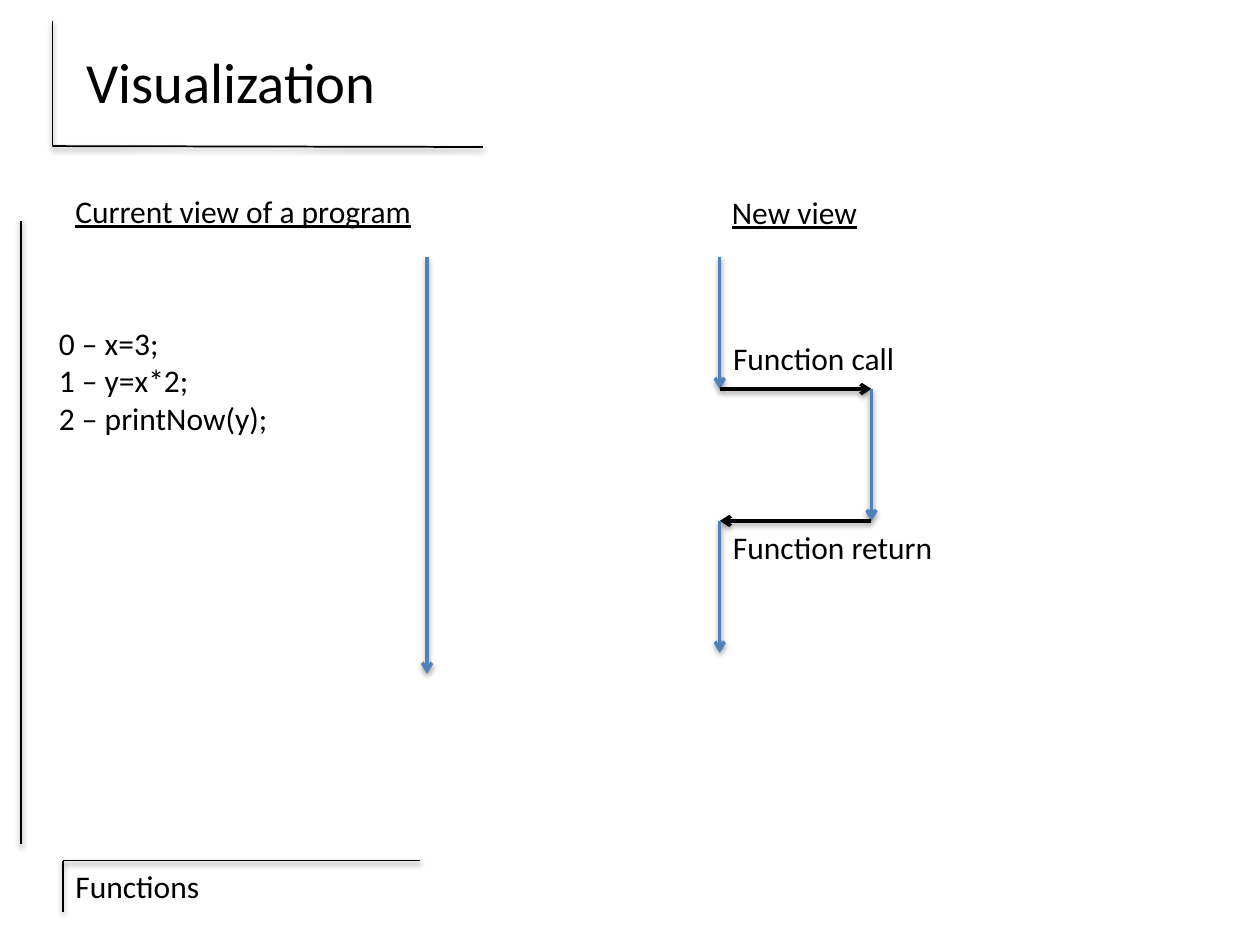
"""Build the Visualization slide comparing two views of program flow."""
from lxml import etree
from pptx import Presentation
from pptx.dml.color import RGBColor
from pptx.enum import shapes, text
from pptx.oxml import ns
from pptx.util import Pt

BLACK = RGBColor(0x00, 0x00, 0x00)
BLUE = RGBColor(0x4F, 0x81, 0xBD)
FONT = "Calibri"

TITLE = ("Visualization", (36, 12, 192, 68.4))
LABELS = [
    (["Functions"], (36, 491.8, 174, 29), {"wrap": True}),
    (["Current view of a program"], (36, 106, 208, 29), {"underline": True}),
    (["New view"], (411.2, 106.6, 86.4, 29), {"underline": True}),
    (["0 – x=3;", "1 – y=x*2;", "2 – printNow(y);"], (26.6, 181.4, 134.6, 72.7), {}),
    (["Function call"], (411.8, 190, 107.3, 29), {}),
    (["Function return"], (411.8, 298, 129.6, 29), {}),
]
FRAME = [
    ((240, 491.8), (36, 491.8)),
    ((12, 126), (12, 482.4)),
    ((36, 491.8), (36, 521.3)),
    ((276, 84), (30, 83.5)),
    ((30, 12), (30, 83)),
]
CURRENT_FLOW = [(244, 147), (244, 385)]
CALL_FLOW = [(411.3, 147), (411.3, 222.3), (498, 222.3),
             (498, 297.7), (411.3, 297.7), (411.3, 373)]


def add_line(s, start, end, color=BLACK, width=1, arrow=False):
    sp = s.shapes.add_connector(shapes.MSO_CONNECTOR.STRAIGHT,
                                *(Pt(v) for v in start + end))
    sp.line.color.rgb = color
    sp.line.width = Pt(width)
    if arrow:
        etree.SubElement(sp.line._get_or_add_ln(), ns.qn("a:tailEnd"), type="arrow")
    effects = etree.SubElement(sp._element.spPr, ns.qn("a:effectLst"))
    shadow = etree.SubElement(effects, ns.qn("a:outerShdw"), blurRad=str(Pt(3.1)),
                              dist=str(Pt(1.6)), dir="5400000", rotWithShape="0")
    tint = etree.SubElement(shadow, ns.qn("a:srgbClr"), val=str(BLACK))
    etree.SubElement(tint, ns.qn("a:alpha"), val="38000")


def add_flow(s, points):
    for start, end in zip(points, points[1:]):
        color = BLUE if start[0] == end[0] else BLACK
        add_line(s, start, end, color, width=2, arrow=True)


def write(tf, lines, size=18, underline=None, wrap=False, align=None,
          fit=text.MSO_AUTO_SIZE.SHAPE_TO_FIT_TEXT):
    tf.word_wrap = wrap
    tf.auto_size = fit
    for i, line in enumerate(lines):
        p = tf.add_paragraph() if i else tf.paragraphs[0]
        p.alignment = align
        r = p.add_run()
        r.text = line
        r.font.name, r.font.size, r.font.underline = FONT, Pt(size), underline
        r.font.color.rgb = BLACK


def main():
    prs = Presentation()
    prs.slide_width, prs.slide_height = Pt(720), Pt(540)
    s = prs.slides.add_slide(prs.slide_layouts[5])

    for start, end in FRAME:
        add_line(s, start, end)

    title, box = TITLE
    sp = s.shapes.title
    sp.left, sp.top, sp.width, sp.height = (Pt(v) for v in box)
    sp.text_frame.vertical_anchor = text.MSO_ANCHOR.MIDDLE
    write(sp.text_frame, [title], size=32.4, wrap=True,
          align=text.PP_ALIGN.CENTER, fit=text.MSO_AUTO_SIZE.NONE)

    for flow in (CURRENT_FLOW, CALL_FLOW):
        add_flow(s, flow)
    for lines, box, style in LABELS:
        sp = s.shapes.add_textbox(*(Pt(v) for v in box))
        write(sp.text_frame, lines, **style)

    prs.save("out.pptx")


if __name__ == "__main__":
    main()
